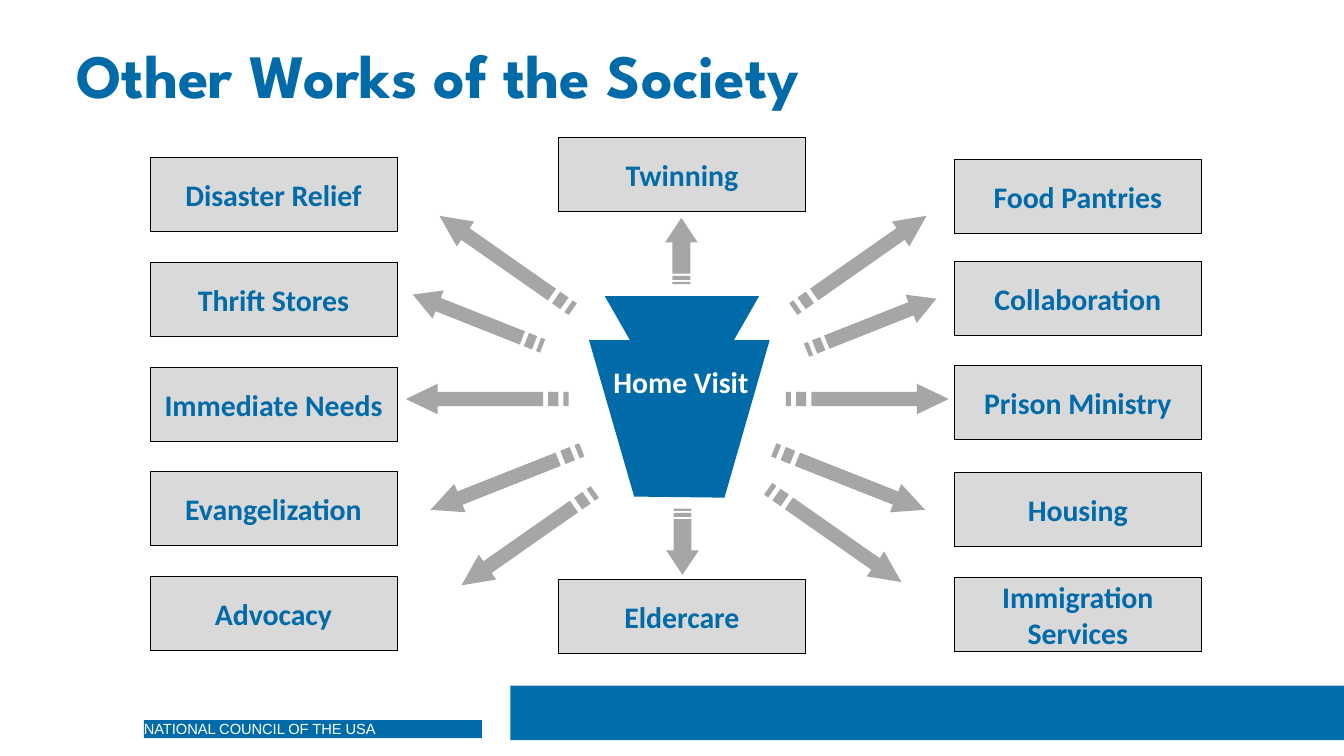
from pptx import Presentation
from pptx.dml.color import RGBColor
from pptx.enum.shapes import MSO_SHAPE
from pptx.enum.text import MSO_ANCHOR, MSO_AUTO_SIZE, PP_ALIGN
from pptx.util import Pt

SCALE = 9525
BLUE = RGBColor(0x00, 0x6B, 0xA8)
BAND = RGBColor(0x01, 0x6F, 0xAC)
PALE = RGBColor(0xD9, 0xD9, 0xD9)
GRAY = RGBColor(0xA6, 0xA6, 0xA6)
BLACK = RGBColor(0x00, 0x00, 0x00)
WHITE = RGBColor(0xFF, 0xFF, 0xFF)

LEFT = [("Disaster Relief", 150), ("Thrift Stores", 250), ("Immediate Needs", 350),
        ("Evangelization", 449), ("Advocacy", 549)]
MIDDLE = [("Twinning", 131), ("Eldercare", 552)]
RIGHT = [("Food Pantries", 152), ("Collaboration", 249), ("Prison Ministry", 348),
         ("Housing", 450), ("Immigration\nServices", 550)]

LONG = (155, 29, 0.47, 0.195)
MID = (133, 29, 0.47, 0.195)
SHORT = (63, 31, 0.55, 0.37)
ARROWS = [
    (826, 380, 0, LONG), (809, 457, 21.6, LONG), (795, 510, 35, LONG),
    (650, 516, 90, SHORT), (503, 513, 145, LONG), (482, 457, 158.4, LONG),
    (464, 380, 180, LONG), (455, 305, 201.6, MID), (482, 250, 215, LONG),
    (649, 239, 270, SHORT), (819, 250, 325, LONG), (830, 309, 338.4, MID),
]


def px(*nums):
    """Turn pixel lengths into a list of EMU lengths."""
    return [round(num * SCALE) for num in nums]


def write(para, text, size, color, font="Calibri", bold=True, align=PP_ALIGN.CENTER):
    """Add one styled run to a paragraph."""
    para.alignment = align
    run = para.add_run()
    run.text = text
    run.font.name = font
    run.font.size = Pt(size)
    run.font.bold = bold
    run.font.color.rgb = color


def paint(shape, color):
    """Give a shape a plain fill without line or shadow."""
    shape.shadow.inherit = False
    shape.fill.solid()
    shape.fill.fore_color.rgb = color
    shape.line.fill.background()
    return shape


def outline(slide, loops, color):
    """Draw closed loops of pixel points as one filled shape."""
    first, *rest = [[tuple(px(*point)) for point in loop] for loop in loops]
    pen = slide.shapes.build_freeform(*first[0], scale=1.0)
    pen.add_line_segments(first[1:], close=True)
    for loop in rest:
        pen.move_to(*loop[0])
        pen.add_line_segments(loop[1:], close=True)
    return paint(pen.convert_to_shape(), color)


def add_title(slide, box):
    """Place and style the slide title."""
    title = slide.shapes.title
    title.left, title.top, title.width, title.height = px(*box)
    frame = title.text_frame
    frame.auto_size = MSO_AUTO_SIZE.NONE
    frame.vertical_anchor = MSO_ANCHOR.MIDDLE
    para = frame.paragraphs[0]
    para.line_spacing = 0.9
    write(para, "Other Works of the Society", 44, BLUE, "League Spartan", align=PP_ALIGN.LEFT)


def add_footer(slide, band, tag):
    """Draw the bottom band and the council tag."""
    paint(slide.shapes.add_shape(MSO_SHAPE.RECTANGLE, *px(*band)), BAND)
    shape = paint(slide.shapes.add_shape(MSO_SHAPE.RECTANGLE, *px(*tag)), BLUE)
    frame = shape.text_frame
    frame.margin_left = frame.margin_top = frame.margin_right = frame.margin_bottom = 0
    frame.vertical_anchor = MSO_ANCHOR.TOP
    write(frame.paragraphs[0], "NATIONAL COUNCIL OF THE USA", 10.5, WHITE, "Arial",
          False, PP_ALIGN.LEFT)


def add_works(slide, left, works, width=235, height=70):
    """Stack one column of labelled boxes."""
    for label, top in works:
        shape = slide.shapes.add_shape(MSO_SHAPE.BEVEL, *px(left, top, width, height))
        shape.adjustments[0] = 0
        paint(shape, PALE)
        shape.line.color.rgb = BLACK
        shape.line.width = Pt(0.25)
        frame = shape.text_frame
        frame.word_wrap = False
        frame.vertical_anchor = MSO_ANCHOR.MIDDLE
        for row, text in enumerate(label.split("\n")):
            para = frame.add_paragraph() if row else frame.paragraphs[0]
            write(para, text, 21.3, BLUE)


def add_arrow(slide, x, y, angle, size):
    """Draw a striped arrow centred on a point and turned by an angle."""
    length, height, shaft, head = size
    tail, tip = x - length / 2, x + length / 2
    neck = tip - length * head
    half, thin = height / 2, height * shaft / 2
    unit = length / 32

    def bar(start, end):
        """Give the corners of one stripe."""
        near, far = tail + start * unit, tail + end * unit
        return [(near, y - thin), (far, y - thin), (far, y + thin), (near, y + thin)]

    base = tail + 5 * unit
    body = [(base, y - thin), (neck, y - thin), (neck, y - half), (tip, y),
            (neck, y + half), (neck, y + thin), (base, y + thin)]
    outline(slide, [body, bar(2, 4), bar(0, 1)], GRAY).rotation = angle


def add_hub(slide, left, top):
    """Draw the central keystone with its label."""
    edge = [(15, 0), (162, 0), (138, 42), (172, 42), (129, 192), (43, 191), (0, 42), (39, 42)]
    outline(slide, [[(left + x, top + y) for x, y in edge]], BLUE)
    label = slide.shapes.add_textbox(*px(left - 15, top + 60, 205, 44))
    label.text_frame.word_wrap = True
    write(label.text_frame.paragraphs[0], "Home Visit", 21.3, WHITE)


def main():
    """Build and save the slide."""
    deck = Presentation()
    deck.slide_width, deck.slide_height = px(1280, 720)
    slide = deck.slides.add_slide(deck.slide_layouts[5])
    add_footer(slide, (486, 653, 794, 52), (137, 686, 322, 17))
    add_title(slide, (63, 34, 1024, 82))
    for left, works in ((143, LEFT), (532, MIDDLE), (909, RIGHT)):
        add_works(slide, left, works)
    for arrow in ARROWS:
        add_arrow(slide, *arrow)
    add_hub(slide, 561, 282)
    deck.save("out.pptx")


if __name__ == "__main__":
    main()
